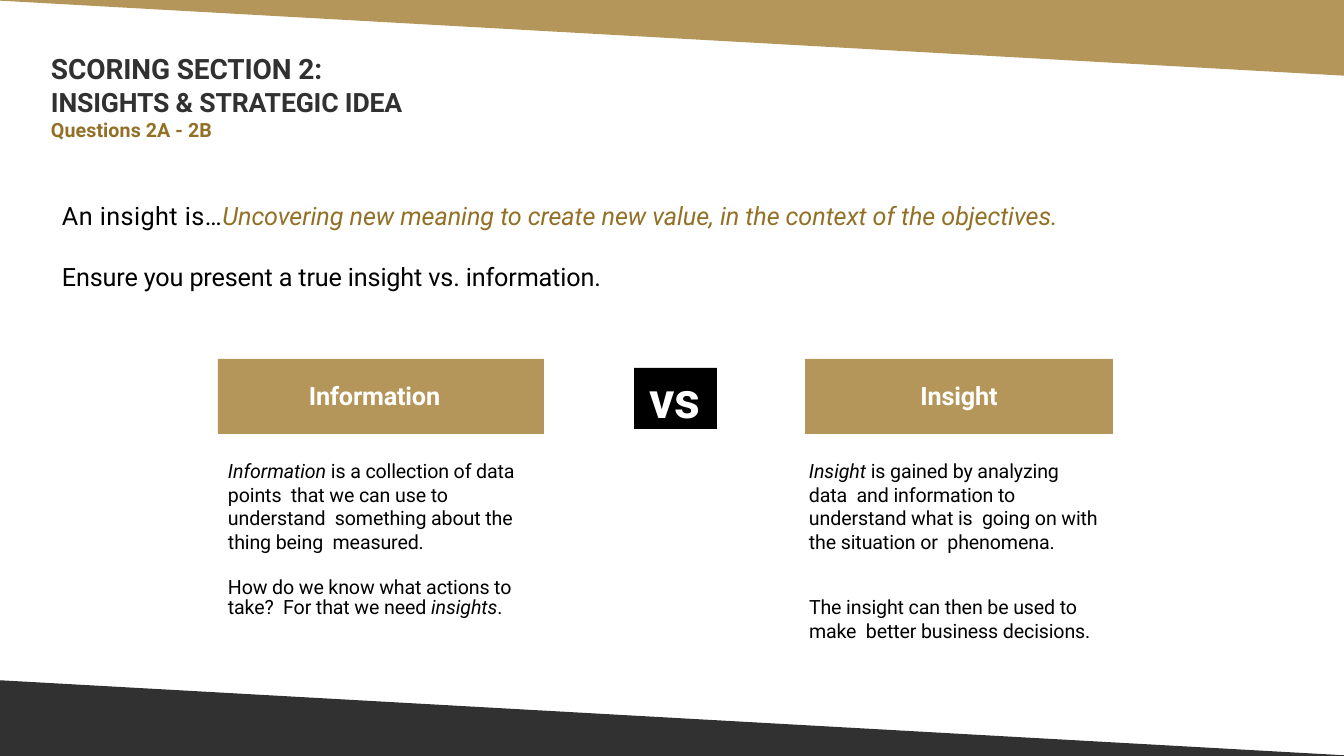
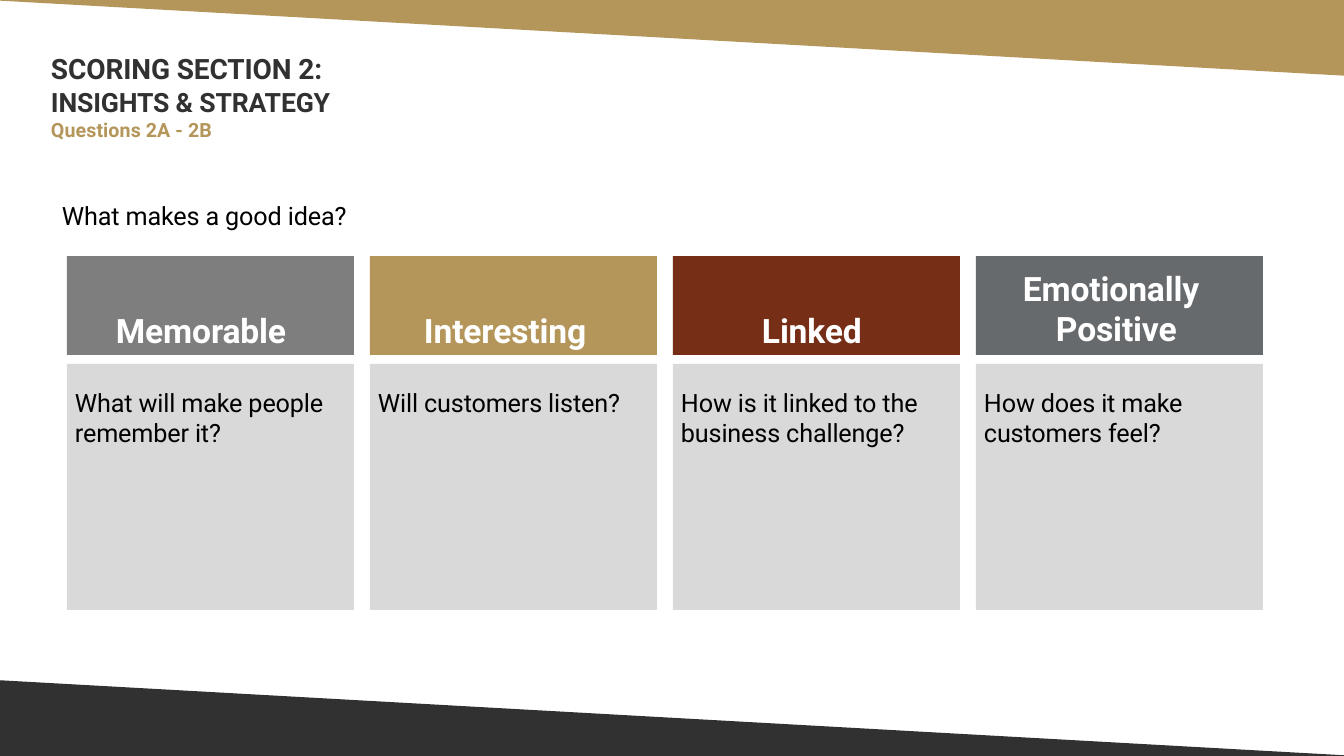
"""Build two slides on scoring insights and ideas."""
from pptx import Presentation
from pptx.dml.color import RGBColor
from pptx.enum.shapes import MSO_SHAPE
from pptx.enum.text import MSO_ANCHOR, MSO_AUTO_SIZE, PP_ALIGN
from pptx.util import Emu, Pt

RECT = MSO_SHAPE.RECTANGLE
TOP = MSO_ANCHOR.TOP
LEFT, CENTER = PP_ALIGN.LEFT, PP_ALIGN.CENTER
NO_FIT = MSO_AUTO_SIZE.NONE

W, H = 1344, 756
SCALE = 12192000 / W
FONT = "Roboto"
GOLD, DARK_GOLD, DARK = "B4965A", "927026", "313131"
BLACK, WHITE, PANEL = "000000", "FFFFFF", "D9D9D9"

TITLE = "SCORING SECTION 2:"
QUESTIONS = "Questions 2A - 2B"
BANDS = [
    (GOLD, [(0, 0), (W, 75), (W, 0)]),
    (DARK, [(0, 681), (W, H), (0, H)]),
]

INSIGHT_LEAD = [
    dict(runs=["An insight is…",
               ("Uncovering new meaning to create new value, "
                "in the context of the objectives.", DARK_GOLD)], spacing=30),
    dict(runs=["Ensure you present a true insight vs. information."], before=22),
]
HEADINGS = [
    ("Information", (218, 359, 326, 75), dict(indent=91)),
    ("Insight", (805, 359, 308, 75), dict(align=CENTER)),
]
VS_BOX = (634, 368, 83, 61)
DEFINITIONS = [
    ((228, 458, 306, 97), 1, None,
     [("Information", BLACK), " is a collection of data points  that we can use to "
      "understand  something about the thing being  measured."]),
    ((228, 577, 297, 43), 2, 14.3,
     ["How do we know what actions to take?  For that we need ",
      ("insights", BLACK), "."]),
    ((809, 458, 292, 120), 1, None,
     [("Insight", BLACK), " is gained by analyzing data  and information to "
      "understand what is  going on with the situation or  phenomena."]),
    ((809, 594, 288, 49), 1, None,
     ["The insight can then be used to make  better business decisions."]),
]

IDEA_LEAD = [dict(runs=["What makes a good idea?"])]
CARDS = [
    ("Memorable", "7E7E7E", 54, dict(indent=49), "What will make people remember it?"),
    ("Interesting", GOLD, 54, dict(indent=54), "Will customers listen?"),
    ("Linked", "762E17", 54, dict(indent=89),
     "How is it linked to the business challenge?"),
    ("Emotionally Positive", "676A6C", 12, dict(indent=80, hang=33),
     "How does it make customers feel?"),
]
CARD_LEFT, CARD_W, CARD_GAP = 67, 287, 16
HEAD_TOP, HEAD_H, BODY_TOP, BODY_H = 256, 99, 364, 246


def px(n):
    return Emu(round(n * SCALE))


def rgb(value):
    return RGBColor.from_string(value)


def fill_paragraph(p, runs, size, color=BLACK, bold=False, align=LEFT,
                   indent=0, hang=0, before=0, line=None, spacing=-10):
    p.alignment = align
    p.space_before = Pt(before)
    if line:
        p.line_spacing = Pt(line)
    pPr = p._p.get_or_add_pPr()
    pPr.set("marL", str(px(indent)))
    pPr.set("indent", str(px(-hang)))
    p.font.name = FONT
    p.font.size = Pt(size)
    p.font.bold = bold
    p.font.color.rgb = rgb(color)
    for part in runs:
        italic = isinstance(part, tuple)
        r = p.add_run()
        r.text = part[0] if italic else part
        if italic:
            r.font.italic = True
            r.font.color.rgb = rgb(part[1])
        r._r.get_or_add_rPr().set("spc", str(-5 if italic else spacing))


def write(sp, paragraphs, inset=1):
    tf = sp.text_frame
    tf.word_wrap = True
    tf.auto_size = NO_FIT
    tf.vertical_anchor = TOP
    tf.margin_left = tf.margin_right = tf.margin_bottom = 0
    tf.margin_top = px(inset)
    for i, options in enumerate(paragraphs):
        p = tf.add_paragraph() if i else tf.paragraphs[0]
        fill_paragraph(p, **options)


def add_text(s, box, paragraphs, inset=1):
    write(s.shapes.add_textbox(*map(px, box)), paragraphs, inset)


def add_box(s, box, color, paragraphs, inset=0):
    sp = s.shapes.add_shape(RECT, *map(px, box))
    sp.shadow.inherit = False
    sp.fill.solid()
    sp.fill.fore_color.rgb = rgb(color)
    sp.line.fill.background()
    write(sp, paragraphs, inset)


def add_slide(prs, subtitle, questions_color, lead):
    s = prs.slides.add_slide(prs.slide_layouts[5])
    for color, points in BANDS:
        builder = s.shapes.build_freeform(*points[0], scale=SCALE)
        builder.add_line_segments(points[1:], close=True)
        sp = builder.convert_to_shape()
        sp.shadow.inherit = False
        sp.fill.solid()
        sp.fill.fore_color.rgb = rgb(color)
        sp.line.color.rgb = rgb(color)
        sp.line.width = Pt(1)
    title = s.shapes.title
    title.left, title.top, title.width, title.height = map(px, (51, 50, 299, 36))
    write(title, [dict(runs=[TITLE], size=20, color=DARK, bold=True)])
    add_text(s, (51, 85, 600, 58), [
        dict(runs=[subtitle], size=19, color=DARK, bold=True),
        dict(runs=[QUESTIONS], size=14, color=questions_color, bold=True, spacing=5),
    ])
    add_text(s, (62, 199, 1090, 94), [dict(size=18, **p) for p in lead])
    return s


def build_insight(prs):
    s = add_slide(prs, "INSIGHTS & STRATEGIC IDEA", DARK_GOLD, INSIGHT_LEAD)
    for text, box, place in HEADINGS:
        add_box(s, box, GOLD,
                [dict(runs=[text], size=18, color=WHITE, bold=True, **place)], 21)
    add_box(s, VS_BOX, BLACK,
            [dict(runs=["vs"], size=36, color=WHITE, bold=True, indent=15, spacing=0)])
    for box, inset, line, runs in DEFINITIONS:
        add_text(s, box, [dict(runs=runs, size=14, line=line)], inset)


def build_idea(prs):
    s = add_slide(prs, "INSIGHTS & STRATEGY", GOLD, IDEA_LEAD)
    for i, (heading, color, inset, place, question) in enumerate(CARDS):
        left = CARD_LEFT + i * (CARD_W + CARD_GAP)
        add_box(s, (left, HEAD_TOP, CARD_W, HEAD_H), color,
                [dict(runs=[heading], size=24, color=WHITE, bold=True, **place)], inset)
        add_box(s, (left, BODY_TOP, CARD_W, BODY_H), PANEL,
                [dict(runs=[question], size=18, indent=8)], 23)


def main():
    prs = Presentation()
    prs.slide_width, prs.slide_height = px(W), px(H)
    build_insight(prs)
    build_idea(prs)
    prs.save("out.pptx")


if __name__ == "__main__":
    main()
